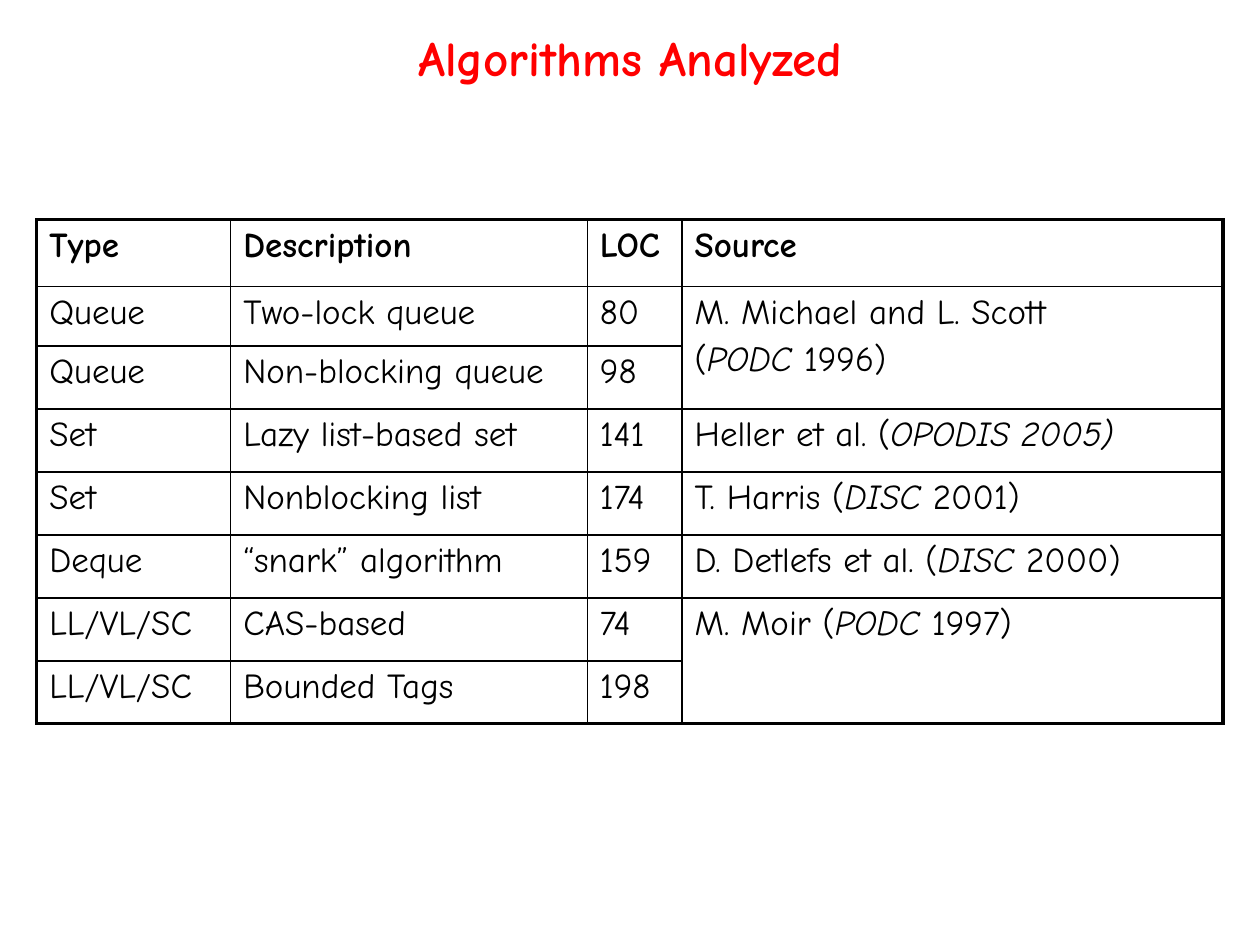
from lxml.etree import SubElement
from pptx import Presentation
from pptx.dml.color import RGBColor
from pptx.enum.text import MSO_ANCHOR, PP_ALIGN
from pptx.oxml.ns import qn
from pptx.util import Cm, Pt

FONT = "Comic Neue"
COLORS = {"title": "FF0000", "ink": "000000"}
THIN, THICK = Pt(1), Pt(2.25)

COLUMN_WIDTHS = [3.91, 7.19, 1.91, 10.9]
ROW_HEIGHTS = [1.35, 1.19] + [1.27] * 6

# Asterisks enclose italics, a line break starts a paragraph,
# and None continues the cell above.
ROWS = [
    ("Type", "Description", "LOC", "Source"),
    ("Queue", "Two-lock queue", "80", "M. Michael and L. Scott\n(*PODC* 1996)"),
    ("Queue", "Non-blocking queue", "98", None),
    ("Set", "Lazy list-based set", "141", "Heller et al. (*OPODIS 2005)*"),
    ("Set", "Nonblocking list", "174", "T. Harris (*DISC *2001)"),
    ("Deque", "“snark” algorithm", "159", "D. Detlefs et al. (*DISC* 2000)"),
    ("LL/VL/SC", "CAS-based", "74", "M. Moir (*PODC *1997)"),
    ("LL/VL/SC", "Bounded Tags", "198", None),
]


def add_span(para, text, size, color, bold=False, italic=False):
    span = para.add_run()
    span.text = text
    font = span.font
    font.name, font.size = FONT, Pt(size)
    font.bold, font.italic = bold, italic
    font.color.rgb = RGBColor.from_string(COLORS[color])


def add_title(page, text):
    box = page.shapes.add_textbox(Cm(1.9), Cm(0.2), Cm(21.6), Cm(1.9))
    frame = box.text_frame
    frame.word_wrap = True
    frame.vertical_anchor = MSO_ANCHOR.MIDDLE
    para = frame.paragraphs[0]
    para.alignment = PP_ALIGN.CENTER
    add_span(para, text, 28, "title", bold=True)


def write_cell(cell, text, bold):
    for index, line in enumerate(text.split("\n")):
        frame = cell.text_frame
        para = frame.add_paragraph() if index else frame.paragraphs[0]
        para.space_before = Pt(4)
        for part, words in enumerate(line.split("*")):
            if words:
                add_span(para, words, 20, "ink", bold, italic=part % 2 == 1)


def set_borders(cell, widths):
    properties = cell._tc.get_or_add_tcPr()
    for side, width in zip("LRTB", widths):
        line = SubElement(properties, qn(f"a:ln{side}"), w=str(int(width)))
        fill = SubElement(line, qn("a:solidFill"))
        SubElement(fill, qn("a:srgbClr"), val=COLORS["ink"])


def add_algorithm_table(page):
    last_row, last_column = len(ROWS) - 1, len(COLUMN_WIDTHS) - 1
    table = page.shapes.add_table(
        len(ROWS), len(COLUMN_WIDTHS), Cm(0.74), Cm(4.43),
        Cm(sum(COLUMN_WIDTHS)), Cm(sum(ROW_HEIGHTS))).table
    table.first_row = table.horz_banding = False
    for column, width in zip(table.columns, COLUMN_WIDTHS):
        column.width = Cm(width)
    for row, height in zip(table.rows, ROW_HEIGHTS):
        row.height = Cm(height)

    # Join the sources shared by two rows
    for r, values in enumerate(ROWS):
        for c, text in enumerate(values):
            if text is None:
                table.cell(r - 1, c).merge(table.cell(r, c))

    # Text and borders, with a thicker outer frame
    for r, values in enumerate(ROWS):
        for c, text in enumerate(values):
            cell = table.cell(r, c)
            bottom = r + cell.span_height - 1 if cell.is_merge_origin else r
            outer = (c == 0, c == last_column, r == 0, bottom == last_row)
            set_borders(cell, [THICK if edge else THIN for edge in outer])
            cell.fill.background()
            if text is not None:
                write_cell(cell, text, bold=r == 0)


def main():
    deck = Presentation()
    deck.slide_width, deck.slide_height = Cm(25.4), Cm(19.05)
    page = deck.slides.add_slide(deck.slide_layouts[6])
    add_algorithm_table(page)
    add_title(page, "Algorithms Analyzed")
    deck.save("out.pptx")


if __name__ == "__main__":
    main()
